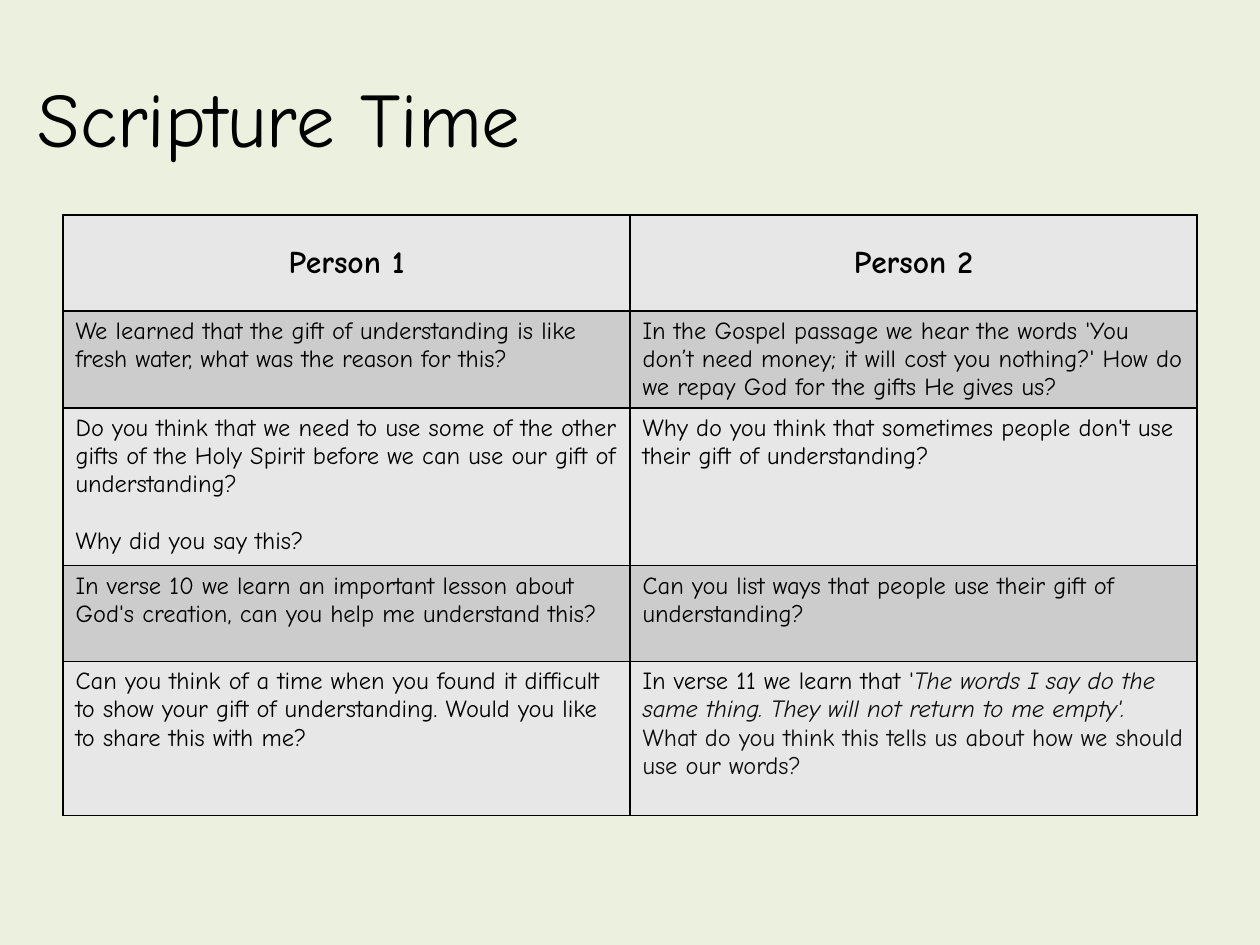
import pptx
import pptx.util
from lxml import etree
from pptx.dml.color import RGBColor
from pptx.enum.text import MSO_ANCHOR, MSO_AUTO_SIZE, PP_ALIGN
from pptx.oxml.ns import qn

Pt = pptx.util.Pt

FONT = "Comic Neue"
BLACK = RGBColor(0, 0, 0)
NEAR_BLACK = RGBColor(0x0D, 0x0D, 0x0D)
BACKGROUND = RGBColor(0xEB, 0xF1, 0xDE)
LIGHT = RGBColor(0xE7, 0xE7, 0xE7)
DARK = RGBColor(0xCC, 0xCC, 0xCC)

TITLE = "Scripture Time"
HEADERS = ["Person 1", "Person 2"]
# Each cell is a list of paragraphs; each paragraph is a list of (text, format) runs.
QUESTIONS = [
    ([[("We learned that the gift of understanding is like fresh water, "
        "what was the reason for this?", {})]],
     [[("In the Gospel passage we hear the words 'You don’t need money; it will cost "
        "you nothing?' How do we repay God for the gifts He gives us?", {})]]),
    ([[("Do you think that we need to use some of the other gifts of the Holy Spirit "
        "before we can use our gift of understanding?", {})],
      [("Why did you say this?", {})]],
     [[("Why do you think that sometimes people don't use their gift of "
        "understanding?", {})]]),
    ([[("In verse 10 we learn an important lesson about God's creation, "
        "can you help me understand this?", {})]],
     [[("Can you list ways that people use their gift of understanding?", {})]]),
    ([[("Can you think of a time when you found it difficult to show your gift of "
        "understanding. Would you like to share this with me?", {})]],
     [[("In verse 11 we learn that ", {}),
       ("'", {"color": NEAR_BLACK}),
       ("The words I say do the same thing. They will not return to me empty'. ",
        {"color": NEAR_BLACK, "italic": True}),
       ("What do you think this tells us about how we should use our words?",
        {"color": NEAR_BLACK})]]),
]
ROW_HEIGHTS = [54.72, 54.72, 90, 54.72, 88]
COLUMN_WIDTH = 324
PARAGRAPH_GAP = 16


def add_run(p, text, size=14, bold=False, italic=False, color=BLACK):
    r = p.add_run()
    r.text = text
    r.font.name = FONT
    r.font.size = Pt(size)
    r.font.bold = bold
    r.font.italic = italic
    r.font.color.rgb = color


def add_borders(cell, width=1):
    tc_pr = cell._tc.get_or_add_tcPr()
    for i, side in enumerate(("a:lnL", "a:lnR", "a:lnT", "a:lnB")):
        ln = etree.Element(qn(side), w=str(Pt(width)))
        fill = etree.SubElement(ln, qn("a:solidFill"))
        etree.SubElement(fill, qn("a:srgbClr"), val=str(BLACK))
        tc_pr.insert(i, ln)  # borders precede the fill


def fill_cell(cell, paragraphs, align=PP_ALIGN.LEFT):
    tf = cell.text_frame
    for i, runs in enumerate(paragraphs):
        p = tf.add_paragraph() if i else tf.paragraphs[0]
        p.alignment = align
        if i:
            p.space_before = Pt(PARAGRAPH_GAP)
        for text, style in runs:
            add_run(p, text, **style)


prs = pptx.Presentation()
prs.slide_width, prs.slide_height = Pt(720), Pt(540)
s = prs.slides.add_slide(prs.slide_layouts[5])
s.background.fill.solid()
s.background.fill.fore_color.rgb = BACKGROUND

title = s.shapes.title
title.left, title.top, title.width, title.height = Pt(14.4), Pt(21.6), Pt(669.6), Pt(90)
tf = title.text_frame
tf.auto_size = MSO_AUTO_SIZE.NONE
tf.vertical_anchor = MSO_ANCHOR.MIDDLE
tf.paragraphs[0].alignment = PP_ALIGN.LEFT
add_run(tf.paragraphs[0], TITLE, size=44)

table = s.shapes.add_table(len(ROW_HEIGHTS), len(HEADERS), Pt(36), Pt(123),
                           Pt(COLUMN_WIDTH * len(HEADERS)), Pt(sum(ROW_HEIGHTS))).table
for column in table.columns:
    column.width = Pt(COLUMN_WIDTH)

header_cells = [[[(text, {"size": 18, "bold": True})]] for text in HEADERS]
for row, (height, contents) in enumerate(zip(ROW_HEIGHTS, [header_cells, *QUESTIONS])):
    table.rows[row].height = Pt(height)
    for col, paragraphs in enumerate(contents):
        cell = table.cell(row, col)
        cell.fill.solid()
        cell.fill.fore_color.rgb = DARK if row % 2 else LIGHT
        cell.vertical_anchor = MSO_ANCHOR.TOP if row else MSO_ANCHOR.MIDDLE
        fill_cell(cell, paragraphs, PP_ALIGN.LEFT if row else PP_ALIGN.CENTER)
        add_borders(cell)

prs.save("out.pptx")
